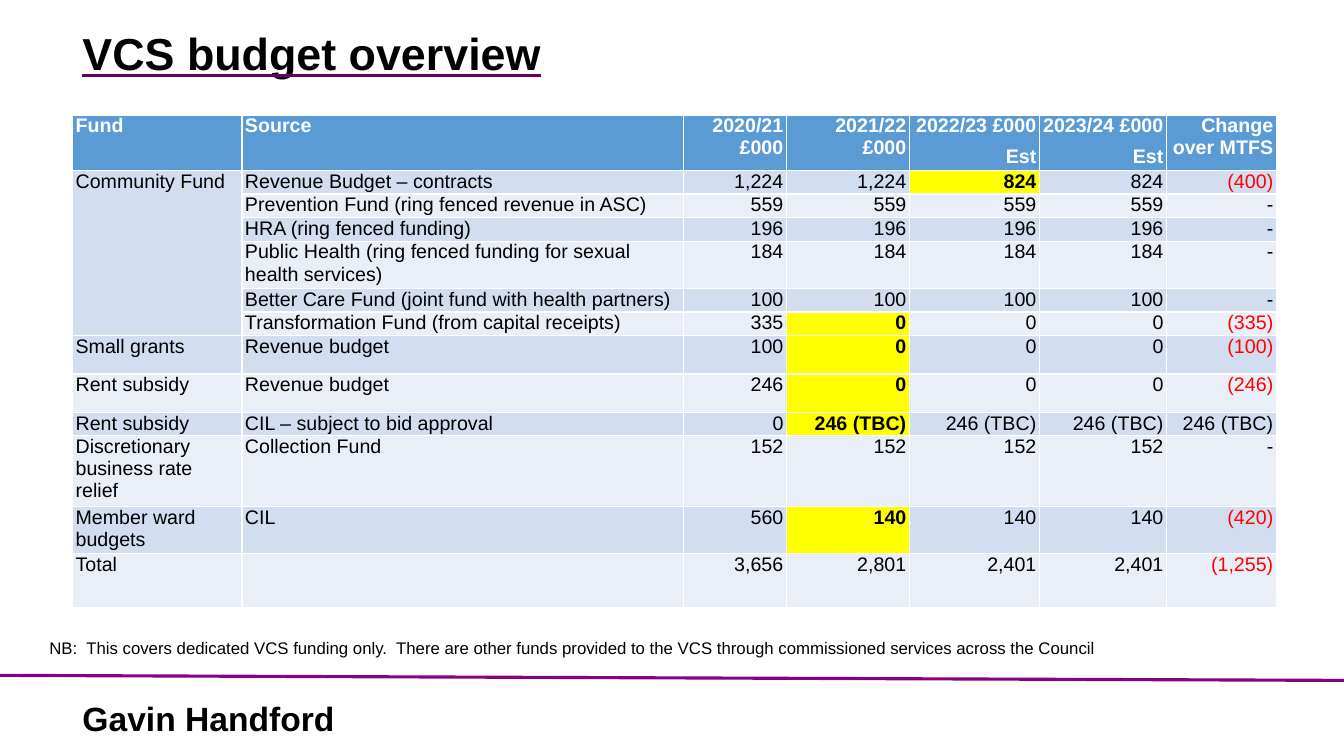
from dataclasses import dataclass

from lxml.etree import SubElement
from pptx import Presentation
from pptx.dml.color import RGBColor
from pptx.enum.text import MSO_ANCHOR, PP_ALIGN
from pptx.oxml.ns import qn
from pptx.util import Emu, Pt


@dataclass(frozen=True)
class Theme:
    font: str = "Arial"
    ink: str = "000000"
    paper: str = "FFFFFF"
    header: str = "5B9BD5"
    bands: tuple[str, str] = ("D2DEEF", "EAEFF7")
    changed: str = "FFFF00"
    cut: str = "FF0000"
    rule: str = "880088"
    underline: str = "660066"
    title: int = 32
    presenter: int = 24
    cell: int = 14
    note: int = 12


@dataclass(frozen=True)
class BudgetRow:
    height: int
    fund: str
    source: str
    amounts: tuple[str, ...]
    changed: int | None = None


THEME = Theme()
LINE = 23
COLUMN_WIDTHS = (168, 438, 102, 122, 129, 126, 109)
HEADER_HEIGHT = 55
HEADINGS = ("Fund", "Source", "2020/21 £000", "2021/22 £000",
            "2022/23 £000\nEst", "2023/24 £000\nEst", "Change over MTFS")
COMMUNITY_ROWS = 6
BUDGET = (
    BudgetRow(LINE, "Community Fund", "Revenue Budget – contracts",
              ("1,224", "1,224", "824", "824", "(400)"), 2),
    BudgetRow(LINE, "", "Prevention Fund (ring fenced revenue in ASC)",
              ("559", "559", "559", "559", "-")),
    BudgetRow(LINE, "", "HRA (ring fenced funding)",
              ("196", "196", "196", "196", "-")),
    BudgetRow(47, "", "Public Health (ring fenced funding for sexual health services)",
              ("184", "184", "184", "184", "-")),
    BudgetRow(LINE, "", "Better Care Fund (joint fund with health partners)",
              ("100", "100", "100", "100", "-")),
    BudgetRow(LINE, "", "Transformation Fund (from capital receipts)",
              ("335", "0", "0", "0", "(335)"), 1),
    BudgetRow(38, "Small grants", "Revenue budget",
              ("100", "0", "0", "0", "(100)"), 1),
    BudgetRow(38, "Rent subsidy", "Revenue budget",
              ("246", "0", "0", "0", "(246)"), 1),
    BudgetRow(LINE, "Rent subsidy", "CIL – subject to bid approval",
              ("0", "246 (TBC)", "246 (TBC)", "246 (TBC)", "246 (TBC)"), 1),
    BudgetRow(70, "Discretionary business rate relief", "Collection Fund",
              ("152", "152", "152", "152", "-")),
    BudgetRow(47, "Member ward budgets", "CIL",
              ("560", "140", "140", "140", "(420)"), 1),
    BudgetRow(53, "Total", "",
              ("3,656", "2,801", "2,401", "2,401", "(1,255)")),
)


def px(n: int) -> Emu:
    return Emu(n * 9144)


def rgb(color: str) -> RGBColor:
    return RGBColor.from_string(color)


def write(tf, text: str, *, size: int, color: str = THEME.ink, bold: bool = False,
          align=PP_ALIGN.LEFT, spacing: float | None = None, after: int = 0,
          underline: str = "") -> None:
    for i, line in enumerate(text.split("\n")):
        p = tf.add_paragraph() if i else tf.paragraphs[0]
        p.alignment = align
        p.space_after = Pt(after)
        if spacing:
            p.line_spacing = spacing
        if not line:
            p.font.size = Pt(size)
            continue
        r = p.add_run()
        r.text = line
        r.font.name = THEME.font
        r.font.size = Pt(size)
        r.font.bold = bold
        r.font.color.rgb = rgb(color)
        if underline:
            r.font.underline = True
            rpr = r.font._element
            fill = SubElement(rpr, qn("a:uFill"))
            solid = SubElement(fill, qn("a:solidFill"))
            SubElement(solid, qn("a:srgbClr"), val=underline)
            rpr.find(qn("a:latin")).addprevious(fill)


def add_text(s, text: str, x: int, y: int, w: int, h: int, *, inset: int | None = None,
             anchor=MSO_ANCHOR.TOP, **style) -> None:
    tf = s.shapes.add_textbox(px(x), px(y), px(w), px(h)).text_frame
    tf.word_wrap = True
    tf.vertical_anchor = anchor
    if inset is not None:
        tf.margin_left = tf.margin_right = tf.margin_top = tf.margin_bottom = px(inset)
    write(tf, text, spacing=0.9, **style)


def fill_cell(cell, text: str, col: int, fill: str, color: str, bold: bool) -> None:
    cell.margin_left = cell.margin_right = px(3)
    cell.margin_top = cell.margin_bottom = 0
    cell.fill.solid()
    cell.fill.fore_color.rgb = rgb(fill)
    write(cell.text_frame, text, size=THEME.cell, color=color, bold=bold, after=6,
          align=PP_ALIGN.RIGHT if col > 1 else PP_ALIGN.LEFT)


def add_budget_table(s, x: int, y: int) -> None:
    heights = (HEADER_HEIGHT, *(row.height for row in BUDGET))
    table = s.shapes.add_table(len(heights), len(COLUMN_WIDTHS), px(x), px(y),
                               px(sum(COLUMN_WIDTHS)), px(sum(heights))).table
    for column, width in zip(table.columns, COLUMN_WIDTHS):
        column.width = px(width)
    for table_row, height in zip(table.rows, heights):
        table_row.height = px(height)
    for col, heading in enumerate(HEADINGS):
        fill_cell(table.cell(0, col), heading, col, THEME.header, THEME.paper, True)
    for i, row in enumerate(BUDGET):
        for col, text in enumerate((row.fund, row.source, *row.amounts)):
            changed = row.changed is not None and col == row.changed + 2
            fill = THEME.changed if changed else THEME.bands[i % 2]
            color = THEME.cut if text.startswith("(") else THEME.ink
            fill_cell(table.cell(i + 1, col), text, col, fill, color, changed)
    table.cell(1, 0).merge(table.cell(COMMUNITY_ROWS, 0))


def add_rule(s, x1: int, y1: int, x2: int, y2: int) -> None:
    line = s.shapes.add_connector(1, px(x1), px(y1), px(x2), px(y2))
    line.line.color.rgb = rgb(THEME.rule)
    line.line.width = Pt(2.25)
    SubElement(line._element.spPr, qn("a:effectLst"))


def main() -> None:
    prs = Presentation()
    prs.slide_width, prs.slide_height = px(1333), px(750)
    s = prs.slides.add_slide(prs.slide_layouts[6])
    add_rule(s, 0, 670, 1333, 675)
    add_text(s, "VCS budget overview", 72, 24, 1150, 63, anchor=MSO_ANCHOR.MIDDLE,
             size=THEME.title, bold=True, underline=THEME.underline)
    add_text(s, "Gavin Handford", 72, 692, 387, 47, size=THEME.presenter, bold=True)
    add_text(s, "NB:  This covers dedicated VCS funding only.  There are other funds "
             "provided to the VCS through commissioned services across the Council",
             46, 632, 1150, 24, inset=3, size=THEME.note)
    add_budget_table(s, 72, 114)
    prs.save("out.pptx")


if __name__ == "__main__":
    main()
